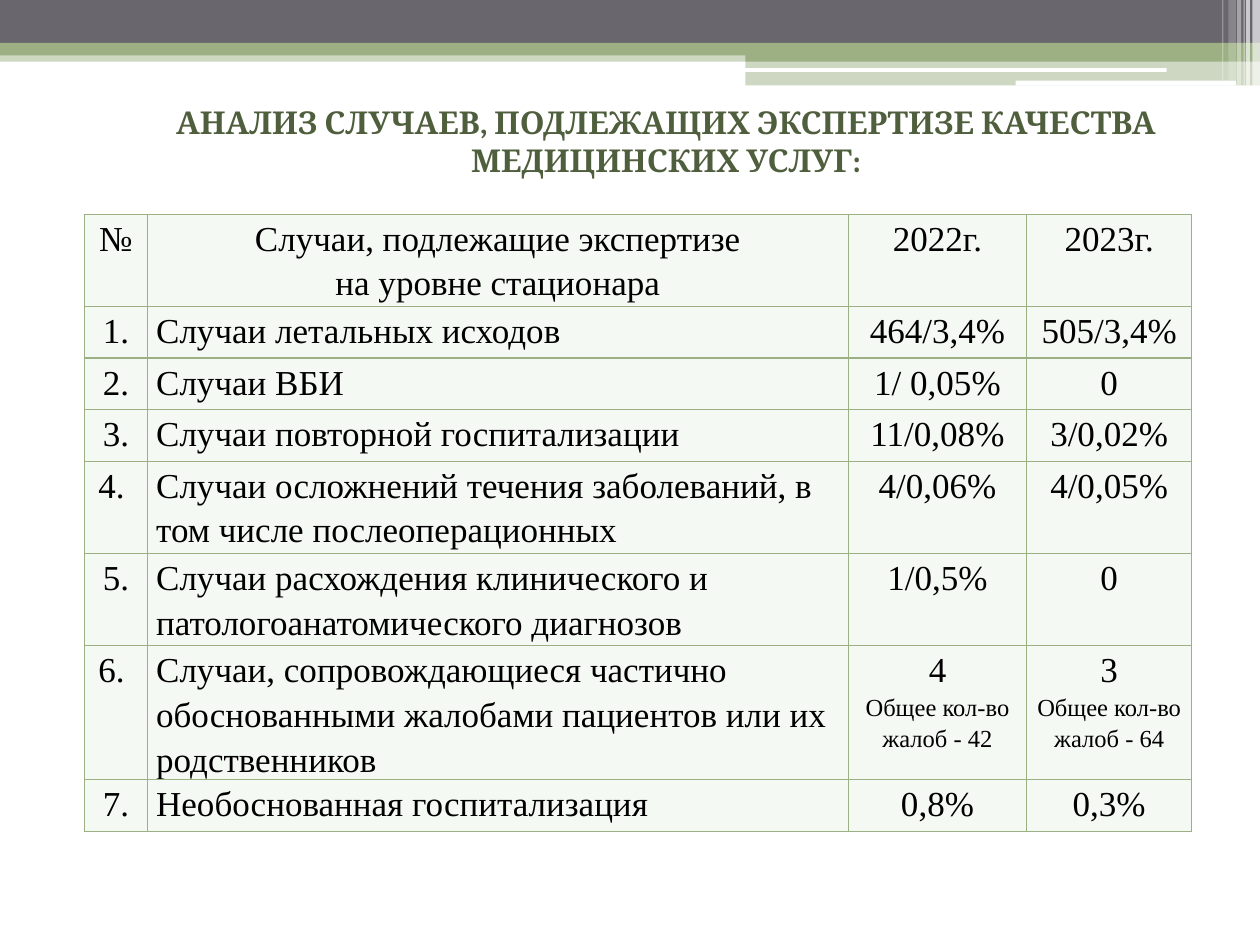
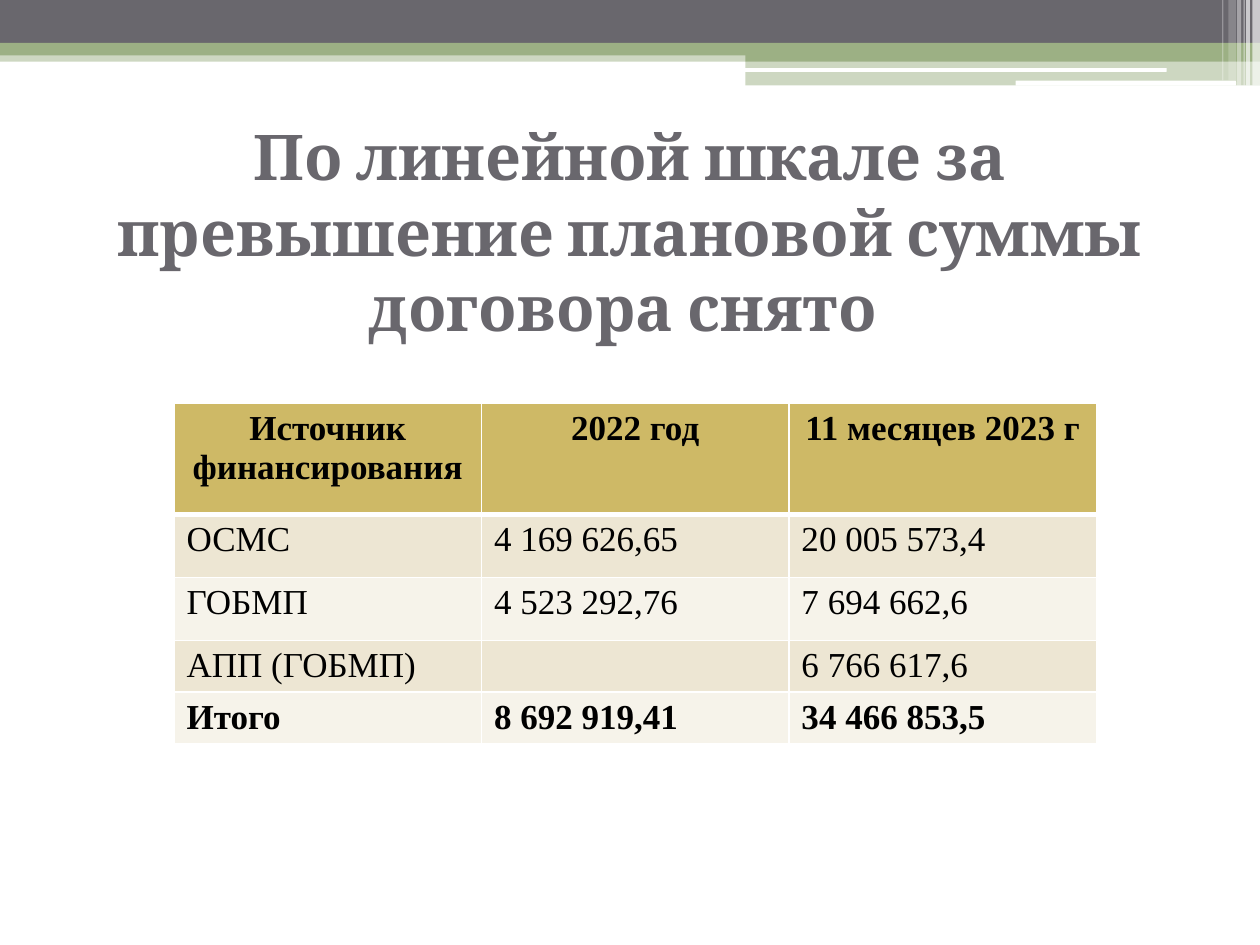
from lxml.etree import SubElement
from pptx import Presentation
from pptx.dml.color import RGBColor
from pptx.enum.shapes import MSO_SHAPE as Kind
from pptx.enum.text import MSO_ANCHOR as Anchor, MSO_AUTO_SIZE as Fit, PP_ALIGN as Align
from pptx.oxml import parse_xml
from pptx.oxml.ns import nsdecls, qn
from pptx.util import Pt

GREEN, GREY, WHITE, BLACK = "9CB084", "69676D", "FFFFFF", "000000"
MINT, GOLD, SAND, CREAM = "F5F9F3", "CEB966", "EDE6D3", "F6F3EA"
HEAD, BODY = "Cambria", "Times New Roman"

BANDS = [
    (0, 28.8, 720, 6.5, GREEN, 50),
    (0, 0, 720, 24.5, GREY, 100),
    (0, 24.5, 720, 7.2, GREEN, 100),
    (426, 28.1, 294, 7.2, GREEN, 100),
    (426, 35.3, 294, 13.5, GREEN, 50),
]
BARS = [(425.5, 38.9, 241.2, 2.2), (580.3, 46.1, 126, 2.9)]
STRIPES = [
    (715.7, 4.3, 49, 65),
    (712.1, 2.2, 49, 65),
    (710.6, 0.7, 49, 60),
    (707, 2.2, 49, 40),
    (702, 4.3, 46, 20),
    (698.4, 0.7, 46, 30),
]

CASES = [
    ("№", "Случаи, подлежащие экспертизе\nна уровне стационара", "2022г.", "2023г."),
    ("1.", "Случаи летальных исходов", "464/3,4%", "505/3,4%"),
    ("2.", "Случаи ВБИ", "1/ 0,05%", "0"),
    ("3.", "Случаи повторной госпитализации", "11/0,08%", "3/0,02%"),
    ("4. ", "Случаи осложнений течения заболеваний, в том числе послеоперационных",
     "4/0,06%", "4/0,05%"),
    ("5.", "Случаи расхождения клинического и патологоанатомического диагнозов",
     "1/0,5%", "0"),
    ("6. ", "Случаи, сопровождающиеся частично обоснованными жалобами пациентов "
     "или их родственников",
     "4\nОбщее кол-во жалоб - 42", "3\nОбщее кол-во жалоб - 64"),
    ("7.", "Необоснованная госпитализация", "0,8%", "0,3%"),
]
SUMS = [
    ("Источник финансирования", "2022 год", "11 месяцев 2023 г"),
    ("ОСМС", "4 169 626,65", "20 005 573,4"),
    ("ГОБМП", "4 523 292,76", "7 694 662,6"),
    ("АПП (ГОБМП)", "", "6 766 617,6"),
    ("Итого", "8 692 919,41", "34 466 853,5"),
]


def color(code):
    return RGBColor.from_string(code)


def add_band(slide, box, code, alpha=100, kind=Kind.RECTANGLE):
    band = slide.shapes.add_shape(kind, *map(Pt, box))
    band.shadow.inherit = False
    band.line.fill.background()
    band.fill.solid()
    band.fill.fore_color.rgb = color(code)
    if alpha < 100:
        tone = next(band.element.spPr.iter(qn("a:srgbClr")))
        SubElement(tone, qn("a:alpha"), val=str(alpha * 1000))
    return band


def dress_master(deck, slide):
    bands = [add_band(slide, box, code, alpha) for *box, code, alpha in BANDS]
    bands += [add_band(slide, box, WHITE, kind=Kind.ROUNDED_RECTANGLE) for box in BARS]
    bands += [add_band(slide, (x, 0, w, h), WHITE, alpha) for x, w, h, alpha in STRIPES]
    tree = deck.slide_master.shapes.element
    for i, band in enumerate(bands):
        band.element.nvSpPr.cNvPr.set("id", str(100 + i))
        tree.insert(2 + i, band.element)


def style(para, font, size, code, bold):
    for run in para.runs:
        run.font.name = font
        run.font.size = Pt(size)
        run.font.bold = bold
        run.font.color.rgb = color(code)


def set_title(slide, text, box, size, code, foot=3.6):
    title = slide.shapes.title
    title.left, title.top, title.width, title.height = map(Pt, box)
    frame = title.text_frame
    frame.text = text
    frame.word_wrap = True
    frame.auto_size = Fit.NONE
    frame.vertical_anchor = Anchor.MIDDLE
    frame.margin_bottom = Pt(foot)
    para = frame.paragraphs[0]
    para.alignment = Align.CENTER
    style(para, HEAD, size, code, True)


def set_edges(cell, code, sizes):
    props = cell._tc.get_or_add_tcPr()
    for i, (side, size) in enumerate(zip("LRTB", sizes)):
        props.insert(i, parse_xml(
            f'<a:ln{side} {nsdecls("a")} w="{Pt(size)}"><a:solidFill>'
            f'<a:srgbClr val="{code}"/></a:solidFill></a:ln{side}>'))


def add_grid(slide, data, left, top, cols, rows):
    box = map(Pt, (left, top, sum(cols), sum(rows)))
    grid = slide.shapes.add_table(len(rows), len(cols), *box).table
    grid.first_row = grid.horz_banding = False
    for col, width in zip(grid.columns, cols):
        col.width = Pt(width)
    for row, height in zip(grid.rows, rows):
        row.height = Pt(height)
    for r, line in enumerate(data):
        for c, text in enumerate(line):
            cell = grid.cell(r, c)
            cell.text_frame.text = text
            yield r, c, cell


def paint(cell, code):
    cell.fill.solid()
    cell.fill.fore_color.rgb = color(code)


def fill_cases(slide):
    rows = [52.75, 29.5, 29.5, 29.5, 52.75, 52.75, 76.5, 29.5]
    for r, c, cell in add_grid(slide, CASES, 48.25, 122.4, [36, 400.5, 102, 94.25], rows):
        paint(cell, MINT)
        set_edges(cell, GREEN, [0.75] * 4)
        cell.margin_left = cell.margin_right = Pt(5)
        cell.margin_top = cell.margin_bottom = 0
        for i, para in enumerate(cell.text_frame.paragraphs):
            para.line_spacing = 1.15
            para.alignment = Align.LEFT if r and c == 1 else Align.CENTER
            style(para, BODY, 14 if r and i else 20, BLACK, False)


def fill_sums(slide):
    rows = [63.5, 36, 36, 29.2, 29.2]
    last = len(SUMS) - 1
    for r, c, cell in add_grid(slide, SUMS, 99.4, 230.4, [175.7] * 3, rows):
        paint(cell, GOLD if r == 0 else SAND if r % 2 else CREAM)
        set_edges(cell, WHITE, [1, 1, 3 if r == 1 else 1, 3 if r == 0 else 1])
        para = cell.text_frame.paragraphs[0]
        para.alignment = Align.LEFT if r else Align.CENTER
        style(para, BODY, 20, BLACK, r in (0, last))


def main():
    deck = Presentation()
    deck.slide_width, deck.slide_height = Pt(720), Pt(540)
    first, second = (deck.slides.add_slide(deck.slide_layouts[5]) for _ in range(2))
    dress_master(deck, first)
    set_title(first, "АНАЛИЗ СЛУЧАЕВ, ПОДЛЕЖАЩИХ ЭКСПЕРТИЗЕ КАЧЕСТВА МЕДИЦИНСКИХ УСЛУГ:",
              (70.6, 49, 620, 84.2), 18, "4F5E3C", 25)
    fill_cases(first)
    set_title(second, "По линейной шкале за превышение плановой суммы договора снято ",
              (36, 90, 648, 84.2), 36, GREY)
    fill_sums(second)
    deck.save("out.pptx")


if __name__ == "__main__":
    main()
